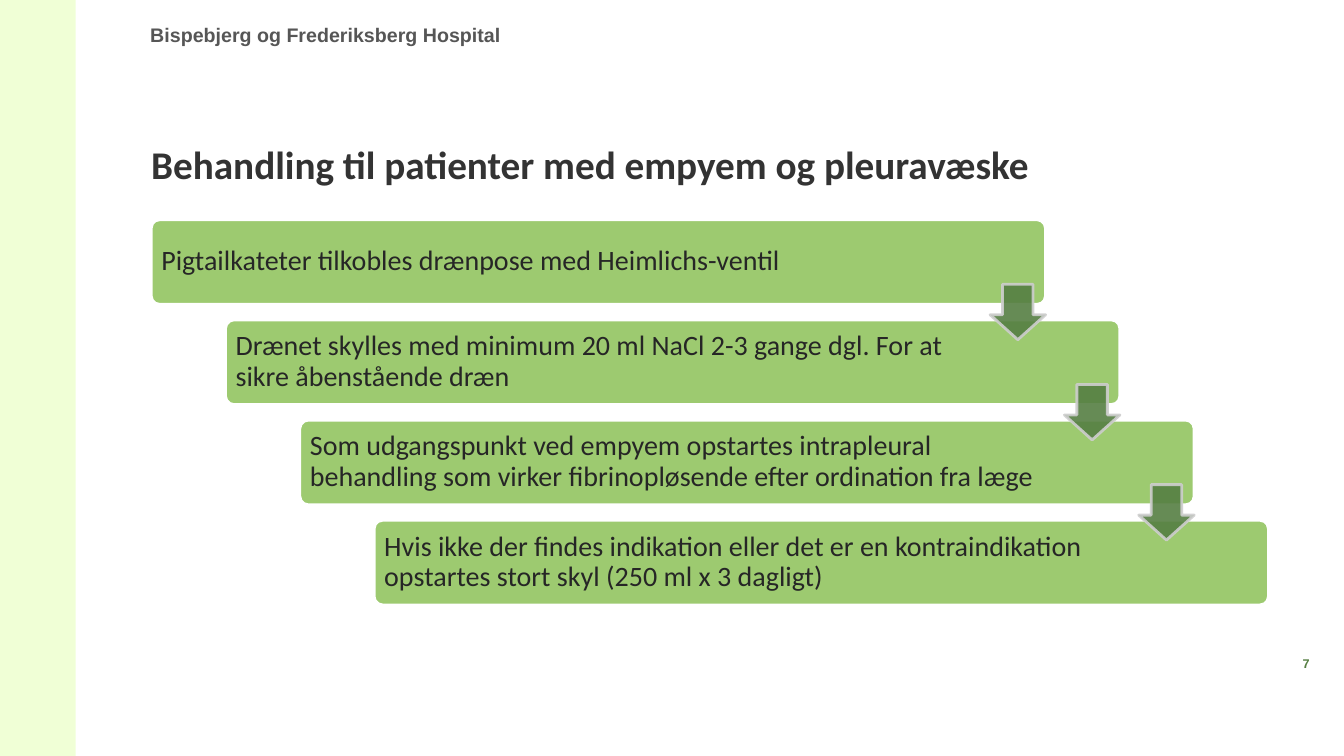
from lxml.etree import SubElement
from pptx import Presentation
from pptx.dml.color import RGBColor
from pptx.enum.shapes import MSO_SHAPE
from pptx.enum.text import MSO_ANCHOR, PP_ALIGN
from pptx.oxml.ns import qn
from pptx.util import Inches, Pt


def paint(color_format, value, opacity=100):
    color_format.solid()
    color_format.fore_color.rgb = RGBColor.from_string(value)
    if opacity < 100:
        color = color_format._xPr.find(".//" + qn("a:srgbClr"))
        SubElement(color, qn("a:alpha"), val=str(opacity * 1000))


def add_text(left, top, width, height, text, size, font, color, bold=False, inset=0, anchor=MSO_ANCHOR.TOP):
    box = page.shapes.add_textbox(Inches(left), Inches(top), Inches(width), Inches(height))
    frame = box.text_frame
    frame.word_wrap = True
    frame.vertical_anchor = anchor
    frame.margin_left = frame.margin_right = Inches(inset)
    frame.margin_top = frame.margin_bottom = Inches(inset)
    para = frame.paragraphs[0]
    para.text = text
    para.font.size = Pt(size)
    para.font.name = font
    para.font.bold = bold
    paint(para.font.fill, color)
    return para


deck = Presentation()
deck.slide_width = Inches(13.33)
deck.slide_height = Inches(7.5)
page = deck.slides.add_slide(deck.slide_layouts[6])

band = page.shapes.add_shape(MSO_SHAPE.RECTANGLE, 0, 0, Inches(0.75), Inches(7.5))
band.shadow.inherit = False
paint(band.fill, "F0FFD6")
band.line.fill.background()

add_text(1.49, 0.23, 6.69, 0.24, "Bispebjerg og Frederiksberg Hospital", 14, "Arial", "565656", bold=True)
title = add_text(1.5, 0.95, 11.09, 0.91, "Behandling til patienter med empyem og pleuravæske",
                 28, "Calibri", "333333", bold=True, anchor=MSO_ANCHOR.BOTTOM)
title.line_spacing = 0.85
number = add_text(12.58, 6.51, 0.75, 0.2, "7", 9, "Arial", "567F43", bold=True)
number.alignment = PP_ALIGN.CENTER

steps = [
    ("Pigtailkateter tilkobles drænpose med Heimlichs-ventil", 7.89),
    ("Drænet skylles med minimum 20 ml NaCl 2-3 gange dgl. For at sikre åbenstående dræn", 7.53),
    ("Som udgangspunkt ved empyem opstartes intrapleural behandling som virker "
     "fibrinopløsende efter ordination fra læge", 7.54),
    ("Hvis ikke der findes indikation eller det er en kontraindikation opstartes "
     "stort skyl (250 ml x 3 dagligt)", 7.53),
]
step_right, step_down = 0.737, 0.994

for index, (text, text_width) in enumerate(steps):
    left = 1.5 + index * step_right
    top = 2.18 + index * step_down
    bar = page.shapes.add_shape(MSO_SHAPE.ROUNDED_RECTANGLE, Inches(left), Inches(top), Inches(8.87), Inches(0.84))
    bar.adjustments[0] = 0.1
    bar.shadow.inherit = False
    paint(bar.fill, "9DCA70")
    paint(bar.line.fill, "FFFFFF")
    bar.line.width = Pt(2)
    para = add_text(left + 0.02, top + 0.02, text_width, 0.79, text, 20, "Calibri", "262626",
                    inset=0.08, anchor=MSO_ANCHOR.MIDDLE)
    para.line_spacing = 0.9

for index in range(len(steps) - 1):
    arrow = page.shapes.add_shape(MSO_SHAPE.DOWN_ARROW, Inches(9.82 + index * step_right),
                                  Inches(2.82 + index * step_down), Inches(0.55), Inches(0.55))
    arrow.adjustments[0] = 0.55
    arrow.adjustments[1] = 0.45
    arrow.shadow.inherit = False
    paint(arrow.fill, "567F43", 90)
    paint(arrow.line.fill, "CECECE", 90)
    arrow.line.width = Pt(2)

deck.save("out.pptx")
